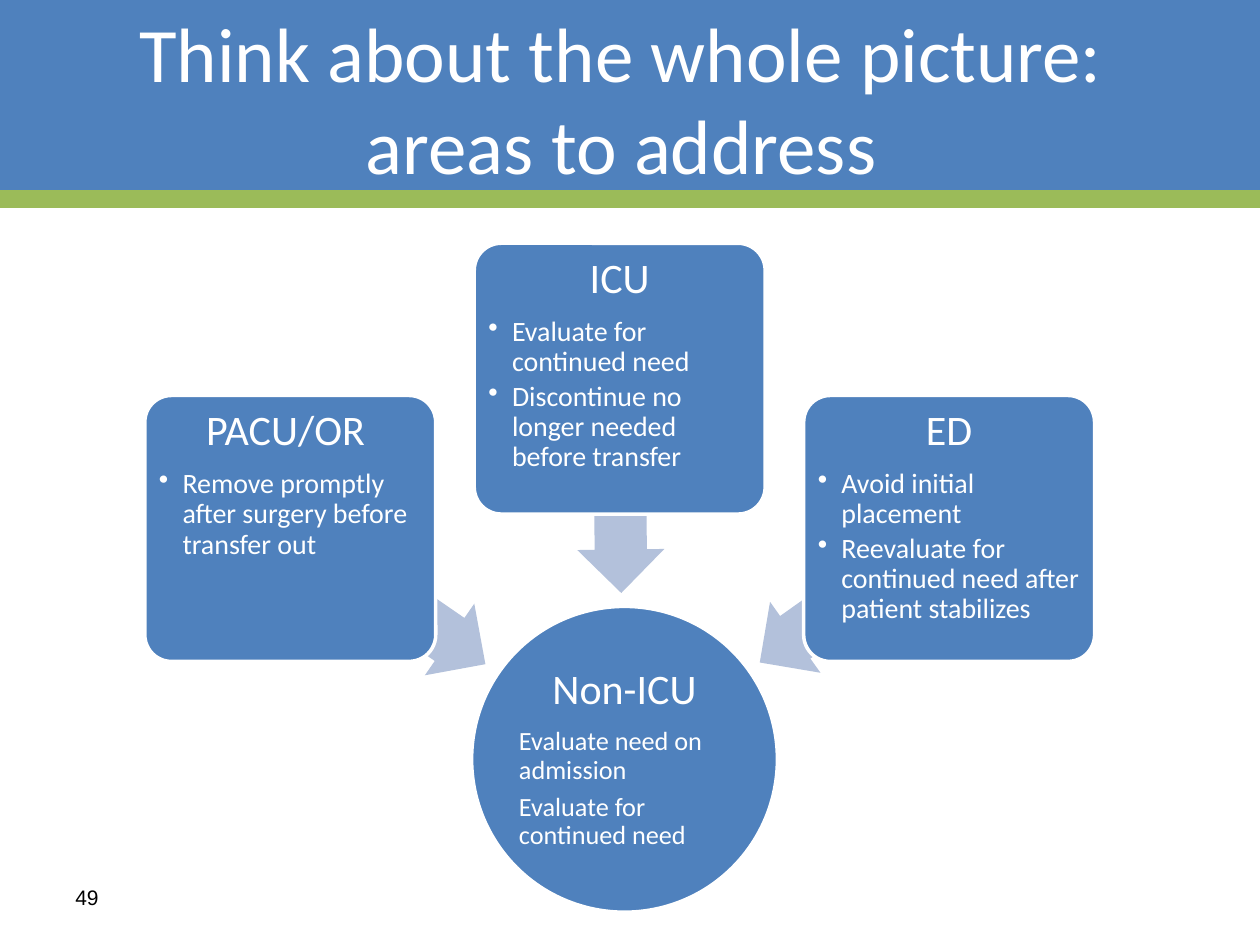
from dataclasses import dataclass

from lxml.etree import SubElement
from pptx import Presentation
from pptx.dml.color import RGBColor
from pptx.enum.shapes import MSO_CONNECTOR, MSO_SHAPE
from pptx.enum.text import MSO_ANCHOR, MSO_AUTO_SIZE, PP_ALIGN
from pptx.oxml.ns import qn
from pptx.util import Pt


@dataclass(frozen=True)
class Theme:
    blue: RGBColor = RGBColor(0x4F, 0x81, 0xBD)
    green: RGBColor = RGBColor(0x9B, 0xBB, 0x59)
    pale: RGBColor = RGBColor(0xB3, 0xC1, 0xDB)
    white: RGBColor = RGBColor(0xFF, 0xFF, 0xFF)
    black: RGBColor = RGBColor(0, 0, 0)
    font: str = "Calibri"
    number_font: str = "Arial"
    title: int = 44
    heading: int = 24
    bullet: int = 16
    hub: int = 15
    number: int = 12


THEME = Theme()
WIDTH, HEIGHT = 720, 540
BAND_HEIGHT = 113.75
TITLE = "Think about the whole picture: \vareas to address "
HUB = ("Non-ICU", ["Evaluate need on admission", "Evaluate for continued need"])
HUB_PLACE = (269.5, 346.5, 174.75, 174.75)
UNITS = [
    {"heading": "PACU/OR ",
     "items": ["Remove promptly after surgery before transfer out"],
     "top": 226, "height": 152,
     "arrow": {"center": (221.4, 340.9), "length": 136, "angle": 214.6}},
    {"heading": "ICU",
     "items": ["Evaluate for continued need",
               "Discontinue no longer needed before transfer"],
     "top": 139, "height": 154.75,
     "arrow": {"center": (354.3, 277.6), "length": 122.5, "angle": 269.3}},
    {"heading": "ED",
     "items": ["Avoid initial placement",
               "Reevaluate for continued need after patient stabilizes"],
     "top": 226, "height": 152,
     "arrow": {"center": (488.2, 340.2), "length": 132.5, "angle": 324.6}},
]
UNIT_LEFT, UNIT_WIDTH, UNIT_STEP = 82.75, 166.25, 188.25
ARROW_THICKNESS = 49.75
PAGE_NUMBER = "49"


def add_shape(page, kind, place, fill, outlined=False):
    shape = page.shapes.add_shape(kind, *map(Pt, place))
    shape.shadow.inherit = False
    shape.fill.solid()
    shape.fill.fore_color.rgb = fill
    if outlined:
        shape.line.color.rgb = THEME.white
        shape.line.width = Pt(2)
    else:
        shape.line.fill.background()
    return shape


def set_font(paragraph, size, color=THEME.white, name=THEME.font):
    paragraph.font.name = name
    paragraph.font.size = Pt(size)
    paragraph.font.color.rgb = color


def set_frame(frame, anchor, inset):
    frame.word_wrap = True
    frame.auto_size = MSO_AUTO_SIZE.NONE
    frame.vertical_anchor = anchor
    frame.margin_left = frame.margin_right = Pt(inset)
    frame.margin_top = frame.margin_bottom = Pt(inset)


def add_bullet(paragraph):
    paragraph.level = 1
    properties = paragraph._p.get_or_add_pPr()
    properties.set("marL", str(Pt(13.5)))
    properties.set("indent", str(Pt(-13.5)))
    SubElement(properties, qn("a:buChar")).set("char", "•")


def write_list(frame, heading, items, size, space_share, bulleted):
    first = frame.paragraphs[0]
    first.text = heading
    first.alignment = PP_ALIGN.CENTER
    first.line_spacing = 0.9
    first.space_after = Pt(THEME.heading * 0.35)
    set_font(first, THEME.heading)
    for item in items:
        paragraph = frame.add_paragraph()
        paragraph.text = item
        paragraph.alignment = PP_ALIGN.LEFT
        paragraph.line_spacing = 0.9
        paragraph.space_after = Pt(size * space_share)
        if bulleted:
            add_bullet(paragraph)
        set_font(paragraph, size)


def add_header(page):
    add_shape(page, MSO_SHAPE.RECTANGLE, (0, 0, WIDTH, BAND_HEIGHT), THEME.blue)
    rule = page.shapes.add_connector(
        MSO_CONNECTOR.STRAIGHT, 0, Pt(BAND_HEIGHT), Pt(WIDTH), Pt(BAND_HEIGHT))
    rule.line.color.rgb = THEME.green
    rule.line.width = Pt(10)
    SubElement(rule._element.spPr, qn("a:effectLst"))

    title = page.shapes.title
    title.left, title.top, title.width, title.height = map(Pt, (0, 0, WIDTH, 111.5))
    frame = title.text_frame
    frame.text = TITLE
    frame.word_wrap = True
    frame.auto_size = MSO_AUTO_SIZE.NONE
    frame.vertical_anchor = MSO_ANCHOR.MIDDLE
    frame.paragraphs[0].alignment = PP_ALIGN.CENTER
    set_font(frame.paragraphs[0], THEME.title)
    title.element.getparent().append(title.element)


def add_hub(page):
    hub = add_shape(page, MSO_SHAPE.OVAL, HUB_PLACE, THEME.blue, outlined=True)
    set_frame(hub.text_frame, MSO_ANCHOR.MIDDLE, 1.5)
    write_list(hub.text_frame, *HUB, THEME.hub, 0.35, bulleted=False)


def add_unit(page, index, unit):
    way = unit["arrow"]
    x, y = way["center"]
    arrow = add_shape(
        page, MSO_SHAPE.LEFT_ARROW,
        (x - way["length"] / 2, y - ARROW_THICKNESS / 2, way["length"], ARROW_THICKNESS),
        THEME.pale)
    arrow.adjustments[0], arrow.adjustments[1] = 0.6, 0.5
    arrow.rotation = way["angle"]

    place = (UNIT_LEFT + index * UNIT_STEP, unit["top"], UNIT_WIDTH, unit["height"])
    box = add_shape(page, MSO_SHAPE.ROUNDED_RECTANGLE, place, THEME.blue, outlined=True)
    box.adjustments[0] = 0.1
    set_frame(box.text_frame, MSO_ANCHOR.TOP, 3.6)
    write_list(box.text_frame, unit["heading"], unit["items"],
               THEME.bullet, 0.15, bulleted=True)


def add_page_number(page):
    box = page.shapes.add_textbox(*map(Pt, (36, 498.25, 167.75, 28.75)))
    box.text_frame.text = PAGE_NUMBER
    box.text_frame.word_wrap = True
    box.text_frame.vertical_anchor = MSO_ANCHOR.MIDDLE
    set_font(box.text_frame.paragraphs[0], THEME.number, THEME.black, THEME.number_font)


def main():
    deck = Presentation()
    deck.slide_width, deck.slide_height = Pt(WIDTH), Pt(HEIGHT)
    page = deck.slides.add_slide(deck.slide_layouts[5])
    add_header(page)
    add_hub(page)
    for index, unit in enumerate(UNITS):
        add_unit(page, index, unit)
    add_page_number(page)
    deck.save("out.pptx")


if __name__ == "__main__":
    main()
